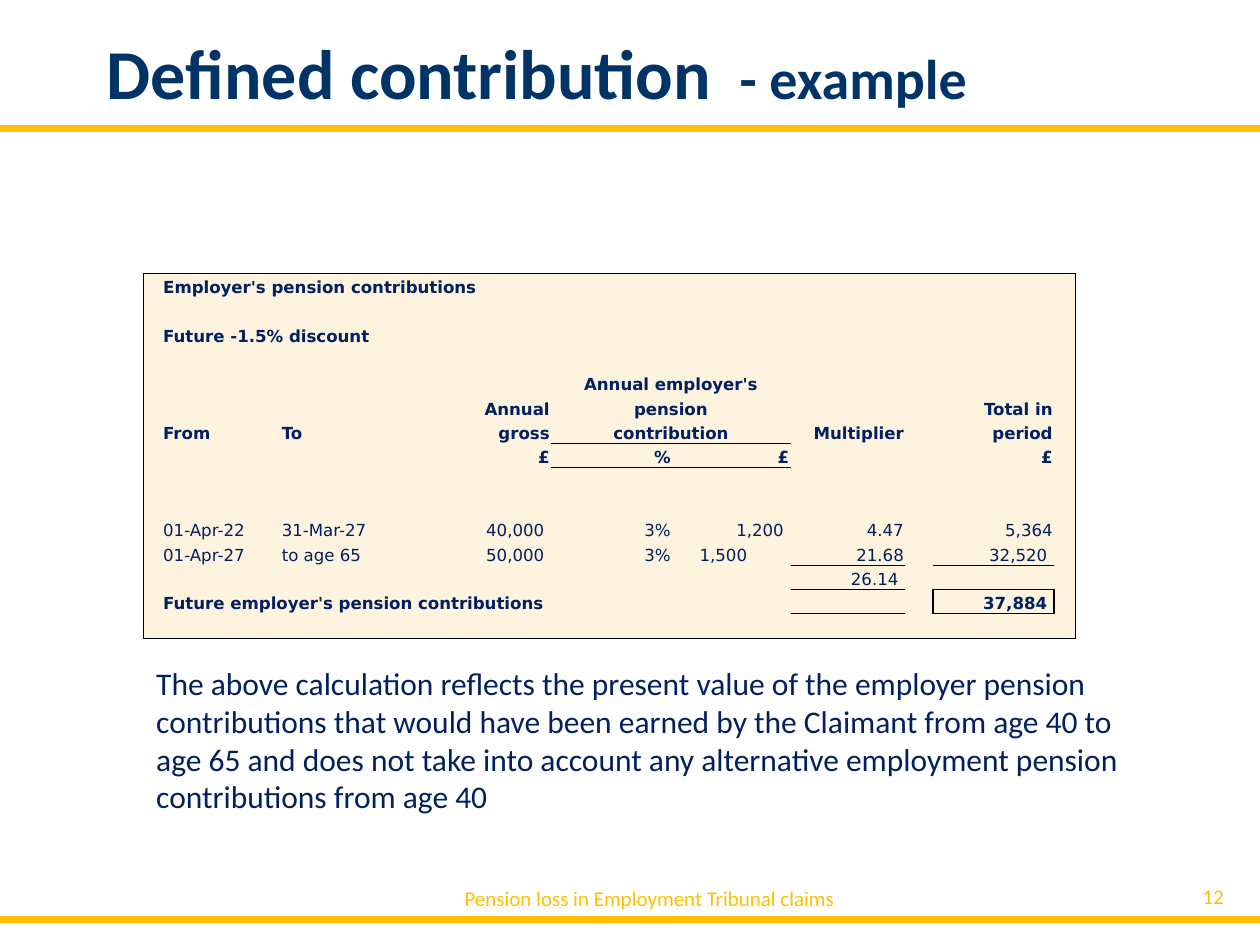
from dataclasses import dataclass

from lxml.etree import SubElement
from pptx import Presentation
from pptx.dml.color import RGBColor as RGB
from pptx.enum.shapes import MSO_CONNECTOR as Connector
from pptx.enum.text import MSO_ANCHOR as Anchor, MSO_AUTO_SIZE as AutoSize, PP_ALIGN as Align
from pptx.oxml.ns import qn
from pptx.util import Cm, Pt


@dataclass(frozen=True)
class Theme:
    heading: RGB = RGB(0x00, 0x33, 0x66)
    ink: RGB = RGB(0x00, 0x20, 0x60)
    gold: RGB = RGB(0xFF, 0xC0, 0x00)
    cream: RGB = RGB(0xFE, 0xF3, 0xDE)
    white: RGB = RGB(0xFF, 0xFF, 0xFF)
    border: str = "000000"
    font: str = "Calibri"
    table_font: str = "DejaVu Sans"
    title_size: float = 40
    subtitle_size: float = 32
    body_size: float = 18
    footer_size: float = 12
    table_size: float = 9.5


@dataclass(frozen=True)
class Entry:
    row: int
    col: int
    text: str
    align: Align = Align.RIGHT
    bold: bool = True
    span: int = 1
    pad: float = 0.03  # right margin in cm


@dataclass(frozen=True)
class Rule:
    row: int
    col: int
    sides: str
    width: float = 0.5


THEME = Theme()
NO_STYLE = "{2D5ABB26-0587-4C30-8999-92F81FD0307C}"
COLUMN_CM = (0.36, 2.39, 2.49, 0.58, 2.39, 2.44, 2.39, 2.31, 0.56, 2.44, 0.43)
ROW_COUNT, ROW_CM = 15, 0.49
LAST_ROW, LAST_COL = ROW_COUNT - 1, len(COLUMN_CM) - 1
FROM, TO, GROSS, PERCENT, POUNDS, MULTIPLIER, TOTAL = 1, 2, 4, 5, 6, 7, 9
SPACE = 0.14  # room held free after some figures, in cm

HEADINGS = [
    Entry(0, FROM, "Employer's pension contributions", Align.LEFT, span=5),
    Entry(2, FROM, "Future -1.5% discount", Align.LEFT, span=3),
    Entry(4, PERCENT, "Annual employer's", Align.CENTER, span=2),
    Entry(5, GROSS, "Annual"),
    Entry(5, PERCENT, "pension", Align.CENTER, span=2),
    Entry(5, TOTAL, "Total in"),
    Entry(6, FROM, "From", Align.LEFT),
    Entry(6, TO, "To", Align.LEFT),
    Entry(6, GROSS, "gross"),
    Entry(6, PERCENT, "contribution", Align.CENTER, span=2),
    Entry(6, MULTIPLIER, "Multiplier"),
    Entry(6, TOTAL, "period"),
    Entry(7, GROSS, "£"),
    Entry(7, PERCENT, "%"),
    Entry(7, POUNDS, "£"),
    Entry(7, TOTAL, "£"),
    Entry(13, FROM, "Future employer's pension contributions", Align.LEFT, span=5),
    Entry(13, TOTAL, "37,884", pad=SPACE),
]
FIGURES = [
    Entry(10, FROM, "01-Apr-22", Align.LEFT, False),
    Entry(10, TO, "31-Mar-27", Align.LEFT, False),
    Entry(10, GROSS, "40,000", bold=False, pad=SPACE),
    Entry(10, PERCENT, "3%", bold=False),
    Entry(10, POUNDS, "1,200", bold=False, pad=SPACE),
    Entry(10, MULTIPLIER, "4.47", bold=False),
    Entry(10, TOTAL, "5,364", bold=False),
    Entry(11, FROM, "01-Apr-27", Align.LEFT, False),
    Entry(11, TO, "to age 65", Align.LEFT, False),
    Entry(11, GROSS, "50,000", bold=False, pad=SPACE),
    Entry(11, PERCENT, "3%", bold=False),
    Entry(11, POUNDS, "1,500", bold=False, pad=0.88),
    Entry(11, MULTIPLIER, "21.68", bold=False),
    Entry(11, TOTAL, "32,520", bold=False, pad=SPACE),
    Entry(12, MULTIPLIER, "26.14", bold=False, pad=SPACE),
]
RULES = [
    Rule(6, PERCENT, "B"), Rule(6, POUNDS, "B"),
    Rule(7, PERCENT, "T"), Rule(7, POUNDS, "T"),
    Rule(11, MULTIPLIER, "B"), Rule(11, TOTAL, "B"),
    Rule(12, MULTIPLIER, "TB"), Rule(12, TOTAL, "T"),
    Rule(12, TOTAL, "B", 1), Rule(13, MULTIPLIER, "T"),
    Rule(13, TOTAL, "LRTB", 1), Rule(13, TOTAL - 1, "R", 1),
    Rule(13, TOTAL + 1, "L", 1), Rule(14, TOTAL, "T", 1),
]


def write(frame, text: str, *, size: float, color: RGB, font: str = THEME.font,
          bold: bool = False, align: Align = Align.LEFT) -> None:
    """Append a formatted run to the first paragraph of a text frame."""
    paragraph = frame.paragraphs[0]
    paragraph.alignment = align
    run = paragraph.add_run()
    run.text = text
    run.font.size, run.font.name, run.font.bold = Pt(size), font, bold
    run.font.color.rgb = color


def add_text(slide, box: tuple, text: str, *, anchor: Anchor = Anchor.MIDDLE, **style) -> None:
    frame = slide.shapes.add_textbox(*map(Cm, box)).text_frame
    frame.word_wrap = True
    frame.vertical_anchor = anchor
    write(frame, text, **style)


def add_band(slide, top: float) -> None:
    band = slide.shapes.add_connector(Connector.STRAIGHT, 0, Cm(top), Cm(25.4), Cm(top))
    band.line.color.rgb, band.line.width = THEME.gold, Pt(4)
    SubElement(band._element.spPr, qn("a:effectLst"))


def cell_borders(row: int, col: int) -> dict[str, float]:
    """Map each ruled side of a cell to its line width, outer frame included."""
    edges = {"L": col == 0, "R": col == LAST_COL, "T": row == 0, "B": row == LAST_ROW}
    widths = {side: 0.5 for side, outer in edges.items() if outer}
    for rule in RULES:
        if (rule.row, rule.col) == (row, col):
            widths.update({side: rule.width for side in rule.sides})
    return widths


def draw_borders(cell, widths: dict[str, float]) -> None:
    properties = cell._tc.get_or_add_tcPr()
    for side in "LRTB":
        if side in widths:
            line = SubElement(properties, qn(f"a:ln{side}"), w=str(Pt(widths[side])))
            fill = SubElement(line, qn("a:solidFill"))
            SubElement(fill, qn("a:srgbClr"), val=THEME.border)


def add_contributions(slide) -> None:
    table = slide.shapes.add_table(
        ROW_COUNT, len(COLUMN_CM), Cm(2.9), Cm(5.51),
        Cm(sum(COLUMN_CM)), Cm(ROW_COUNT * ROW_CM)).table
    table.first_row = table.horz_banding = False
    table._tbl.tblPr.find(qn("a:tableStyleId")).text = NO_STYLE
    for column, width in zip(table.columns, COLUMN_CM):
        column.width = Cm(width)

    entries = {(entry.row, entry.col): entry for entry in HEADINGS + FIGURES}
    for r, row in enumerate(table.rows):
        row.height = Cm(ROW_CM)
        for c, cell in enumerate(row.cells):
            draw_borders(cell, cell_borders(r, c))
            cell.fill.solid()
            cell.fill.fore_color.rgb = THEME.cream
            cell.vertical_anchor = Anchor.BOTTOM
            cell.margin_left = cell.margin_right = cell.margin_top = Cm(0.03)
            cell.margin_bottom = 0
            entry = entries.get((r, c))
            if entry is None:
                # Keeps empty rows from growing to the default type size
                SubElement(cell.text_frame.paragraphs[0]._p, qn("a:endParaRPr"),
                           sz=str(int(THEME.table_size * 100)))
                continue
            cell.margin_right = Cm(entry.pad)
            write(cell.text_frame, entry.text, size=THEME.table_size, color=THEME.ink,
                  font=THEME.table_font, bold=entry.bold, align=entry.align)
            if entry.span > 1:
                cell.merge(table.cell(r, c + entry.span - 1))


def add_title(slide) -> None:
    title = slide.shapes.title
    title.left, title.top, title.width, title.height = map(Cm, (1.9, 0.33, 19.4, 2.21))
    title.fill.solid()
    title.fill.fore_color.rgb = THEME.white
    frame = title.text_frame
    frame.auto_size, frame.vertical_anchor = AutoSize.NONE, Anchor.MIDDLE
    for text, size in (("Defined contribution ", THEME.title_size),
                       (" - example", THEME.subtitle_size)):
        write(frame, text, size=size, color=THEME.heading, bold=True)


def main() -> None:
    deck = Presentation()
    deck.slide_width, deck.slide_height = Cm(25.4), Cm(19.05)
    slide = deck.slides.add_slide(deck.slide_layouts[5])
    for top in (18.54, 2.59):
        add_band(slide, top)
    add_title(slide)
    footer = {"size": THEME.footer_size, "color": THEME.gold}
    add_text(slide, (9.07, 17.7, 8.05, 0.81), "Pension loss in Employment Tribunal claims",
             align=Align.CENTER, **footer)
    add_text(slide, (18.21, 17.63, 6.71, 0.89), "12", align=Align.RIGHT, **footer)
    add_contributions(slide)
    add_text(slide, (2.9, 13.26, 20.19, 3.33),
             "The above calculation reflects the present value of the employer pension "
             "contributions that would have been earned by the Claimant from age 40 to age 65 "
             "and does not take into account any alternative employment pension "
             "contributions from age 40",
             anchor=Anchor.TOP, size=THEME.body_size, color=THEME.ink)
    deck.save("out.pptx")


if __name__ == "__main__":
    main()
